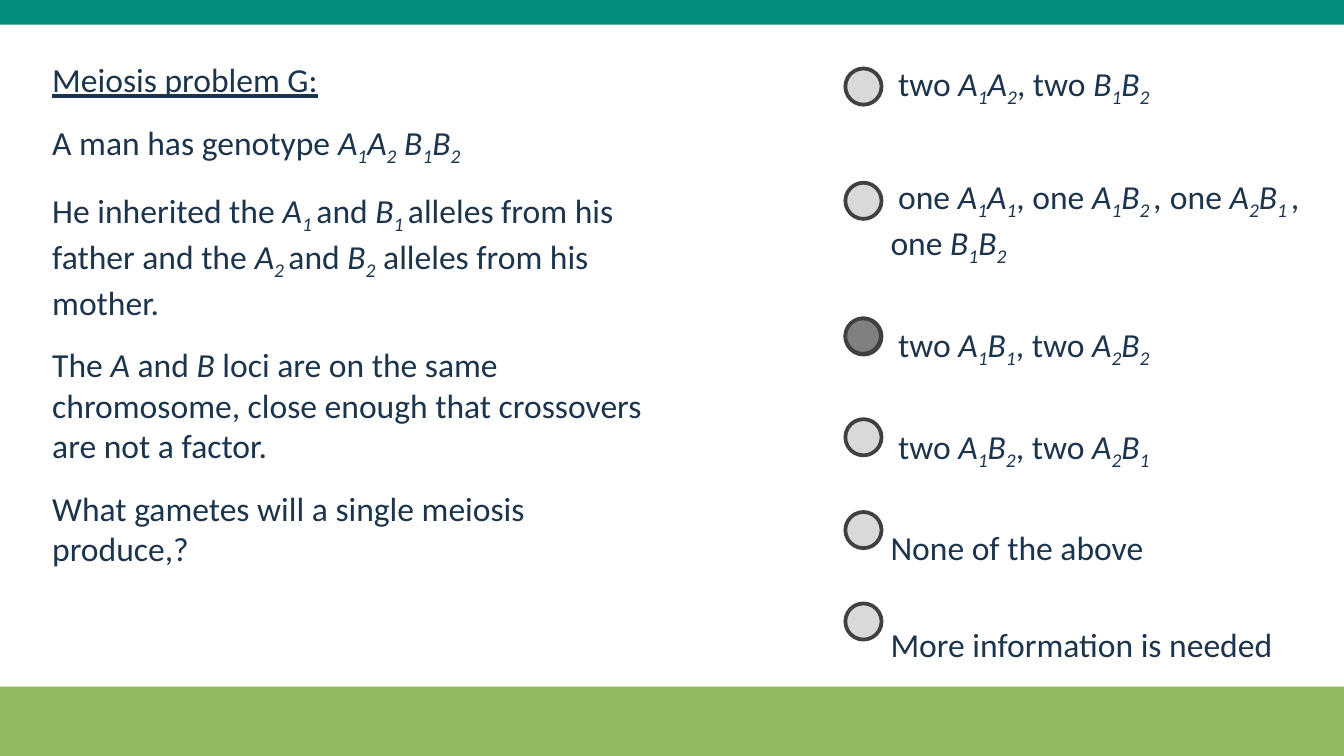
from pptx import Presentation
from pptx.dml.color import RGBColor
from pptx.enum.shapes import MSO_SHAPE
from pptx.enum.text import MSO_AUTO_SIZE
from pptx.util import Pt

RECT = MSO_SHAPE.RECTANGLE
OVAL = MSO_SHAPE.OVAL
GROW = MSO_AUTO_SIZE.SHAPE_TO_FIT_TEXT

COLORS = {
    "text": "1C344C",
    "header": "028F7C",
    "footer": "90BB5F",
    "option": "D9D9D9",
    "chosen": "808080",
    "outline": "404040",
}

# Asterisks switch italics on and off, underscores switch subscript.
HEADING = "Meiosis problem G:"
PROBLEM = [
    "A man has genotype *A_1_A_2_ B_1_B_2_*",
    "He inherited the *A_1 _*and *B_1 _*alleles from his father and the "
    "*A_2 _*and* B_2_* alleles from his mother.",
    "The *A* and *B* loci are on the same chromosome, close enough that "
    "crossovers are not a factor.",
    "What gametes will a single meiosis produce,?",
]
# Each answer: top of its button, space after, text
ANSWERS = [
    (36.7, 36, " two *A_1_A_2_*, two *B_1_B_2_*"),
    (97.9, 30, " one *A_1_A_1_*, one *A_1_B_2 _, *one *A_2_B_1 _,* one *B_1_B_2_*"),
    (170.6, 30, " two *A_1_B_1_*, two *A_2_B_2_*"),
    (224.6, 30, " two *A_1_B_2_*, two *A_2_B_1_*"),
    (274.3, 30, "None of the above"),
    (323.3, 30, "More information is needed"),
]
CHOSEN = 2
BUTTON_LEFT = 452.9


class Slide:
    def __init__(self, prs, font="Calibri", size=18):
        self.s = prs.slides.add_slide(prs.slide_layouts[6])
        self.font = font
        self.size = size

    def color(self, name):
        return RGBColor.from_string(COLORS[name])

    def shape(self, kind, x, y, w, h, fill):
        sp = self.s.shapes.add_shape(kind, Pt(x), Pt(y), Pt(w), Pt(h))
        sp.shadow.inherit = False
        sp.fill.solid()
        sp.fill.fore_color.rgb = self.color(fill)
        sp.line.fill.background()
        return sp

    def band(self, y, h, fill):
        self.shape(RECT, 0, y, 723, h, fill)

    def button(self, y, size, fill):
        sp = self.shape(OVAL, BUTTON_LEFT, y, size, size, fill)
        sp.line.color.rgb = self.color("outline")
        sp.line.width = Pt(2)

    def runs(self, p, marked):
        """Add the runs of a text marked with * for italic and _ for subscript."""
        italic = subscript = False
        for i, stretch in enumerate(marked.split("*")):
            italic = i % 2 == 1
            for j, piece in enumerate(stretch.split("_")):
                subscript = j % 2 == 1
                if not piece:
                    continue
                r = p.add_run()
                r.text = piece
                r.font.name = self.font
                r.font.size = Pt(self.size)
                r.font.color.rgb = self.color("text")
                r.font.italic = italic
                if subscript:
                    r._r.get_or_add_rPr().set("baseline", "-25000")

    def text(self, x, y, w, h, paragraphs):
        """Add a text box from (space after, marked text) pairs."""
        sp = self.s.shapes.add_textbox(Pt(x), Pt(y), Pt(w), Pt(h))
        tf = sp.text_frame
        tf.word_wrap = True
        tf.auto_size = GROW
        for i, (space, marked) in enumerate(paragraphs):
            p = tf.add_paragraph() if i else tf.paragraphs[0]
            p.space_after = Pt(space)
            self.runs(p, marked)
        return tf


def main():
    prs = Presentation()
    prs.slide_width = Pt(720)
    prs.slide_height = Pt(405)
    slide = Slide(prs)

    problem = slide.text(20.9, 28.1, 339, 273.6,
                         [(12, line) for line in [HEADING] + PROBLEM])
    problem.paragraphs[0].runs[0].font.underline = True

    slide.band(367.9, 38.2, "footer")
    slide.band(0, 13.2, "header")

    slide.text(470, 30.2, 252, 317.5,
               [(space, marked) for _, space, marked in ANSWERS])
    for top, _, _ in ANSWERS:
        slide.button(top, 19.4, "option")
    slide.button(ANSWERS[CHOSEN][0], 19, "chosen")

    prs.save("out.pptx")


if __name__ == "__main__":
    main()
